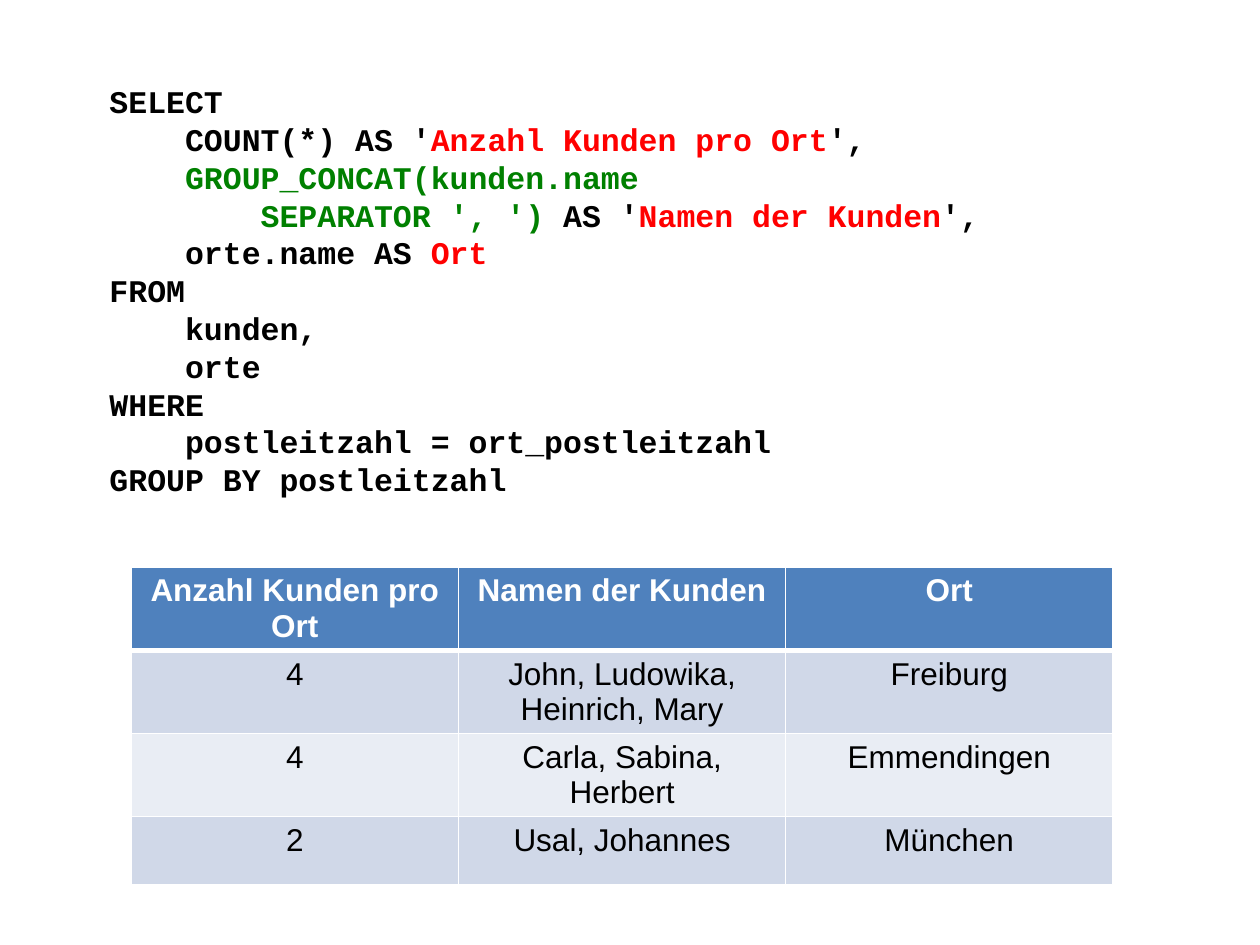
"""Build a slide with an SQL grouping query and its result table."""
from lxml.etree import SubElement
from pptx import Presentation
from pptx.dml.color import RGBColor
from pptx.enum.text import MSO_AUTO_SIZE as AutoSize, PP_ALIGN as Align
from pptx.oxml.ns import qn
from pptx.util import Pt

BLACK = RGBColor(0x00, 0x00, 0x00)
WHITE = RGBColor(0xFF, 0xFF, 0xFF)
RED = RGBColor(0xFF, 0x00, 0x00)
GREEN = RGBColor(0x00, 0x80, 0x00)
HEADER_BLUE = RGBColor(0x4F, 0x81, 0xBD)
BANDS = [RGBColor(0xE9, 0xED, 0xF4), RGBColor(0xD0, 0xD8, 0xE8)]

QUERY = [
    [("SELECT", BLACK)],
    [("    COUNT(*) AS '", BLACK), ("Anzahl Kunden pro Ort", RED), ("',", BLACK)],
    [("    ", BLACK), ("GROUP_CONCAT(kunden.name", GREEN)],
    [("        SEPARATOR ', ') ", GREEN), ("AS '", BLACK),
     ("Namen der Kunden", RED), ("',", BLACK)],
    [("    orte.name AS ", BLACK), ("Ort", RED)],
    [("FROM", BLACK)],
    [("    kunden,", BLACK)],
    [("    orte", BLACK)],
    [("WHERE", BLACK)],
    [("    postleitzahl = ort_postleitzahl", BLACK)],
    [("GROUP BY postleitzahl", BLACK)],
]
RESULT = [
    ["Anzahl Kunden pro Ort", "Namen der Kunden", "Ort"],
    ["4", "John, Ludowika, Heinrich, Mary", "Freiburg"],
    ["4", "Carla, Sabina, Herbert", "Emmendingen"],
    ["2", "Usal, Johannes", "München"],
]


def style(font, color, **values):
    font.color.rgb = color
    for name, value in values.items():
        setattr(font, name, value)


def add_borders(cell, widths):
    for side, width in widths.items():
        border = SubElement(cell._tc.get_or_add_tcPr(), qn(f"a:{side}"), w=str(Pt(width)))
        fill = SubElement(border, qn("a:solidFill"))
        SubElement(fill, qn("a:srgbClr"), val=str(WHITE))


prs = Presentation()
prs.slide_width, prs.slide_height = Pt(720), Pt(540)
slide = prs.slides.add_slide(prs.slide_layouts[6])

result = slide.shapes.add_table(4, 3, Pt(75), Pt(324), Pt(561), Pt(156)).table
for column in result.columns:
    column.width = Pt(187)
for row in result.rows:
    row.height = Pt(39)
for row_index, values in enumerate(RESULT):
    is_header = row_index == 0
    for column_index, value in enumerate(values):
        cell = result.cell(row_index, column_index)
        add_borders(cell, {"lnL": 1, "lnR": 1, "lnT": 3 if row_index == 1 else 1,
                           "lnB": 3 if is_header else 1})
        cell.fill.solid()
        cell.fill.fore_color.rgb = HEADER_BLUE if is_header else BANDS[row_index % 2]
        cell.text = value
        paragraph = cell.text_frame.paragraphs[0]
        paragraph.alignment = Align.CENTER
        style(paragraph.runs[0].font, WHITE if is_header else BLACK,
              name="Arial", size=Pt(18), bold=is_header)

query = slide.shapes.add_textbox(Pt(55.5), Pt(43.5), Pt(623.5), Pt(247)).text_frame
query.word_wrap = True
query.auto_size = AutoSize.SHAPE_TO_FIT_TEXT
for line_index, parts in enumerate(QUERY):
    line = query.add_paragraph() if line_index else query.paragraphs[0]
    line.line_spacing = Pt(21.6)
    for text, color in parts:
        run = line.add_run()
        run.text = text
        style(run.font, color, name="Courier New", size=Pt(18), bold=True)

prs.save("out.pptx")
